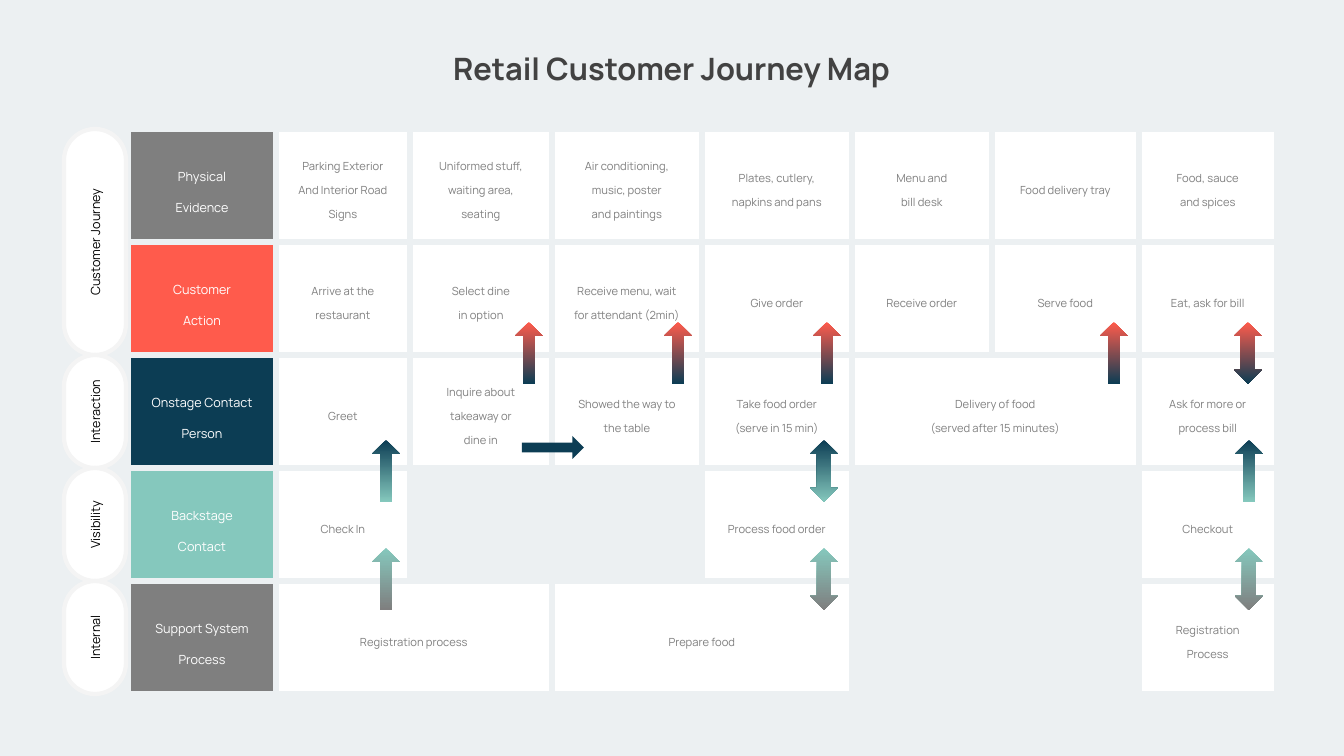
from lxml import etree
from pptx import Presentation
from pptx.dml.color import RGBColor
from pptx.enum.shapes import MSO_SHAPE
from pptx.enum.text import MSO_ANCHOR, PP_ALIGN
from pptx.oxml import parse_xml
from pptx.oxml.ns import nsdecls
from pptx.util import Pt

CENTER, MIDDLE = PP_ALIGN.CENTER, MSO_ANCHOR.MIDDLE
UP, BOTH, RIGHT = MSO_SHAPE.UP_ARROW, MSO_SHAPE.UP_DOWN_ARROW, MSO_SHAPE.RIGHT_ARROW
PILL = MSO_SHAPE.ROUNDED_RECTANGLE

BACKDROP = RGBColor(0xEC, 0xF0, 0xF2)
WHITE = RGBColor(0xFF, 0xFF, 0xFF)
BLACK = RGBColor(0, 0, 0)
DARK = RGBColor(0x42, 0x42, 0x42)
GREY = RGBColor(0x7F, 0x7F, 0x7F)
RED = RGBColor(0xFF, 0x5B, 0x4C)
NAVY = RGBColor(0x0C, 0x3D, 0x54)
TEAL = RGBColor(0x85, 0xC8, 0xBD)
PILL_EDGE = RGBColor(0xF4, 0xF4, 0xF4)

# Content: "" is an empty cell, None continues the cell on its left
TITLE = "Retail Customer Journey Map"
STAGES = [
    (GREY, ["Physical\nEvidence", "Parking Exterior And Interior Road Signs",
            "Uniformed stuff, waiting area, seating",
            "Air conditioning, music, poster\nand paintings",
            "Plates, cutlery, napkins and pans", "Menu and\nbill desk",
            "Food delivery tray", "Food, sauce\nand spices"]),
    (RED, ["Customer\nAction", "Arrive at the restaurant", "Select dine\nin option",
           "Receive menu, wait for attendant (2min)", "Give order", "Receive order",
           "Serve food", "Eat, ask for bill"]),
    (NAVY, ["Onstage Contact Person", "Greet", "Inquire about takeaway or\ndine in",
            "Showed the way to the table", "Take food order (serve in 15 min)",
            "Delivery of food\n(served after 15 minutes)", None,
            "Ask for more or process bill"]),
    (TEAL, ["Backstage\nContact", "Check In", "", "", "Process food order", "", "",
            "Checkout"]),
    (GREY, ["Support System\nProcess", "Registration process", None, "Prepare food",
            None, "", "", "Registration Process"]),
]
# Label, first row, number of rows
PHASES = [("Customer Journey", 0, 2), ("Interaction", 2, 1), ("Visibility", 3, 1),
          ("Internal", 4, 1)]
# Top, top colour, bottom colour, [(left, kind)]
ARROW_ROWS = [
    (322, RED, NAVY, [(515, UP), (664, UP), (813, UP), (1100, UP), (1234, BOTH)]),
    (440, NAVY, TEAL, [(372, UP), (810, BOTH), (1235, UP)]),
    (548, TEAL, GREY, [(372, UP), (810, BOTH), (1235, BOTH)]),
]
ARROW_W, ARROW_H = 28, 62
ARROW_ADJUST = {UP: 0.42, RIGHT: 0.42, BOTH: 0.36}

# Layout in px
SLIDE_W, SLIDE_H = 1344, 756
TABLE_X, TABLE_Y, ROW_H = 128, 129, 113
COL_W = [148, 134, 142, 150, 150, 140, 147, 138]
PILL_X, PILL_W = 64, 62
SCALE = 12192000 / SLIDE_W

# Text formats
TITLE_FONT = {"name": "Manrope", "size": Pt(22), "bold": True}
HEAD_FONT = {"name": "Manrope", "size": Pt(9), "bold": False}
BODY_FONT = {"name": "Manrope", "size": Pt(8), "bold": False}


def px(*lengths):
    return [round(v * SCALE) for v in lengths]


def write(tf, text, fmt, color, spacing=None):
    tf.text = text
    for p in tf.paragraphs:
        p.alignment = CENTER
        p.line_spacing = spacing
        for key, value in fmt.items():
            setattr(p.font, key, value)
        for r in p.runs:
            for key, value in fmt.items():
                setattr(r.font, key, value)
            r.font.color.rgb = color


def set_margins(obj, x, y):
    obj.margin_left = obj.margin_right = px(x)[0]
    obj.margin_top = obj.margin_bottom = px(y)[0]


def add_borders(cell):
    tc_pr = cell._tc.get_or_add_tcPr()
    for side in "LRTB":
        ln = parse_xml(f'<a:ln{side} {nsdecls("a")} w="{Pt(4.5)}"/>')
        fill = etree.SubElement(ln, ln.tag.replace(f"ln{side}", "solidFill"))
        color = etree.SubElement(fill, ln.tag.replace(f"ln{side}", "srgbClr"))
        color.set("val", str(BACKDROP))
        tc_pr.append(ln)


def add_arrow(s, kind, left, top, width, height, colors):
    sp = s.shapes.add_shape(kind, *px(left, top, width, height))
    sp.shadow.inherit = False
    sp.adjustments[0] = ARROW_ADJUST[kind]
    sp.adjustments[1] = 0.5
    sp.line.fill.background()
    if len(colors) == 1:
        sp.fill.solid()
        sp.fill.fore_color.rgb = colors[0]
        return
    sp.fill.gradient()
    sp.fill.gradient_angle = 270
    for stop, color in zip(sp.fill.gradient_stops, colors):
        stop.color.rgb = color


def add_table(s):
    frame = s.shapes.add_table(len(STAGES), len(COL_W), *px(
        TABLE_X, TABLE_Y, sum(COL_W), ROW_H * len(STAGES)))
    table = frame.table
    table.first_row = table.horz_banding = False
    for col, width in zip(table.columns, COL_W):
        col.width = px(width)[0]
    for i, (color, texts) in enumerate(STAGES):
        table.rows[i].height = px(ROW_H)[0]
        for j, text in enumerate(texts):
            cell = table.cell(i, j)
            add_borders(cell)
            cell.vertical_anchor = MIDDLE
            cell.fill.solid()
            if j == 0:
                cell.fill.fore_color.rgb = color
                set_margins(cell, 5, 2)
                write(cell.text_frame, text, HEAD_FONT, WHITE, 1.78)
                continue
            cell.fill.fore_color.rgb = BACKDROP if text == "" else WHITE
            set_margins(cell, 20, 0)
            if text is None:
                table.cell(i, j - 1).merge(cell)
            else:
                write(cell.text_frame, text, BODY_FONT, GREY, 1.57)


def add_phase(s, label, first, count):
    # Laid out flat, then turned about its centre
    length = ROW_H * count
    mid_x = PILL_X + PILL_W / 2
    mid_y = TABLE_Y + ROW_H * first + length / 2
    sp = s.shapes.add_shape(PILL, *px(
        mid_x - length / 2, mid_y - PILL_W / 2, length, PILL_W))
    sp.rotation = 270
    sp.adjustments[0] = 0.5
    sp.shadow.inherit = False
    sp.fill.solid()
    sp.fill.fore_color.rgb = WHITE
    sp.line.color.rgb = PILL_EDGE
    sp.line.width = Pt(3)
    tf = sp.text_frame
    tf.vertical_anchor = MIDDLE
    set_margins(tf, 0, 0)
    write(tf, label, HEAD_FONT, BLACK)


def main():
    prs = Presentation()
    prs.slide_width, prs.slide_height = px(SLIDE_W, SLIDE_H)
    s = prs.slides.add_slide(prs.slide_layouts[6])
    s.background.fill.solid()
    s.background.fill.fore_color.rgb = BACKDROP

    # Title
    tf = s.shapes.add_textbox(*px(419, 39, 505, 58)).text_frame
    tf.word_wrap = True
    tf.vertical_anchor = MIDDLE
    write(tf, TITLE, TITLE_FONT, DARK)

    # Journey grid
    add_table(s)

    # Arrows between stages
    for top, upper, lower, arrows in ARROW_ROWS:
        for left, kind in arrows:
            add_arrow(s, kind, left, top, ARROW_W, ARROW_H, [upper, lower])
    add_arrow(s, RIGHT, 522, 436, ARROW_H, 23, [NAVY])

    # Phase labels
    for phase in PHASES:
        add_phase(s, *phase)

    prs.save("out.pptx")


if __name__ == "__main__":
    main()
